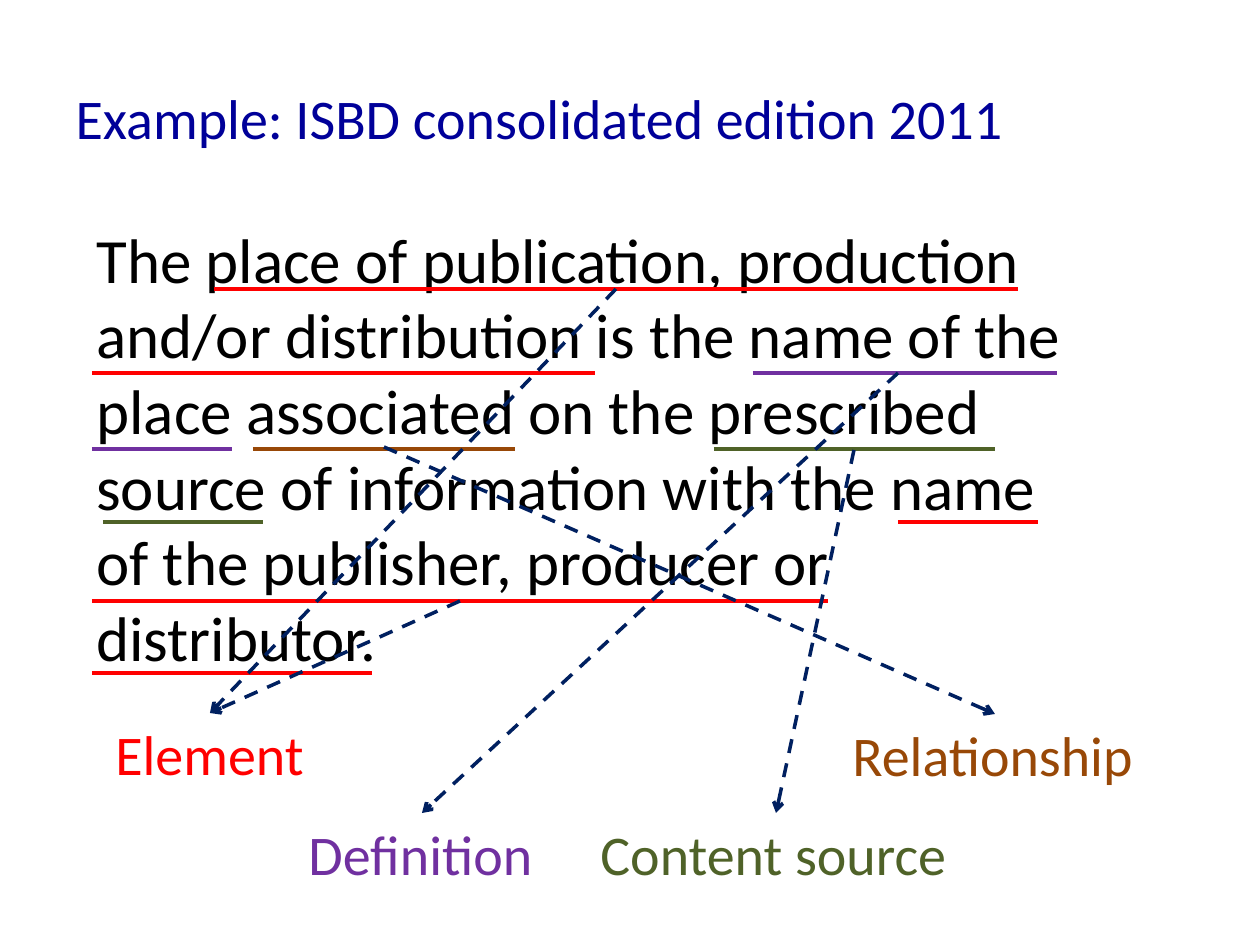
from lxml.etree import SubElement
from pptx import Presentation
from pptx.dml.color import RGBColor
from pptx.enum.dml import MSO_LINE_DASH_STYLE as Dash
from pptx.enum.shapes import MSO_CONNECTOR as Connector
from pptx.enum.text import MSO_ANCHOR as Anchor, MSO_AUTO_SIZE as AutoSize, PP_ALIGN as Align
from pptx.oxml.ns import qn
from pptx.util import Pt

SCALE = 914400 / 126
RED, PURPLE, GREEN, BROWN = "FF0000", "7030A0", "4F6228", "984807"
NAVY, BLUE, BLACK = "002060", "000099", "000000"


def write(shape, text, size, color):
    paragraph = shape.text_frame.paragraphs[0]
    paragraph.alignment = Align.LEFT
    run = paragraph.add_run()
    run.text = text
    run.font.name = "Calibri"
    run.font.size = Pt(size)
    run.font.color.rgb = RGBColor.from_string(color)


def draw_line(slide, points, color):
    line = slide.shapes.add_connector(Connector.STRAIGHT, *[round(value * SCALE) for value in points])
    line.line.color.rgb = RGBColor.from_string(color)
    line.line.width = Pt(2)
    SubElement(line._element.spPr, qn("a:effectLst"))
    return line


presentation = Presentation()
presentation.slide_width = round(1260 * SCALE)
presentation.slide_height = round(945 * SCALE)
slide = presentation.slides.add_slide(presentation.slide_layouts[5])

title = slide.shapes.title
title.left, title.top, title.width, title.height = [round(value * SCALE) for value in (63, 38, 1134, 158)]
title.text_frame.vertical_anchor = Anchor.MIDDLE
write(title, "Example: ISBD consolidated edition 2011", 32, BLUE)

statement = (
    "The place of publication, production and/or distribution is the name of the place "
    "associated on the prescribed source of information with the name of the publisher, "
    "producer or distributor."
)
texts = [
    (statement, 36, BLACK, True, (84, 214, 1022, 471)),
    ("Element", 32, RED, False, (103, 713, 215, 81)),
    ("Definition", 32, PURPLE, False, (296, 813, 253, 81)),
    ("Content source", 32, GREEN, False, (588, 813, 374, 81)),
    ("Relationship", 32, BROWN, False, (840, 714, 309, 81)),
]
for text, size, color, wraps, box in texts:
    shape = slide.shapes.add_textbox(*[round(value * SCALE) for value in box])
    shape.text_frame.word_wrap = wraps
    shape.text_frame.auto_size = AutoSize.SHAPE_TO_FIT_TEXT
    write(shape, text, size, color)

underlines = [
    (214, 1018, 289, RED),
    (92, 595, 373, RED),
    (92, 828, 601, RED),
    (92, 372, 673, RED),
    (753, 1057, 373, PURPLE),
    (714, 995, 449, GREEN),
    (103, 263, 522, GREEN),
    (253, 515, 449, BROWN),
    (92, 232, 449, PURPLE),
    (898, 1038, 522, RED),
]
for left, right, y, color in underlines:
    draw_line(slide, (left, y, right, y), color)

arrows = [
    (616, 289, 210, 713),
    (460, 601, 210, 713),
    (898, 373, 422, 813),
    (854, 450, 776, 813),
    (384, 447, 995, 714),
]
for points in arrows:
    arrow = draw_line(slide, points, NAVY)
    arrow.line.dash_style = Dash.DASH
    SubElement(arrow.line._get_or_add_ln(), qn("a:tailEnd"), type="arrow")

presentation.save("out.pptx")
